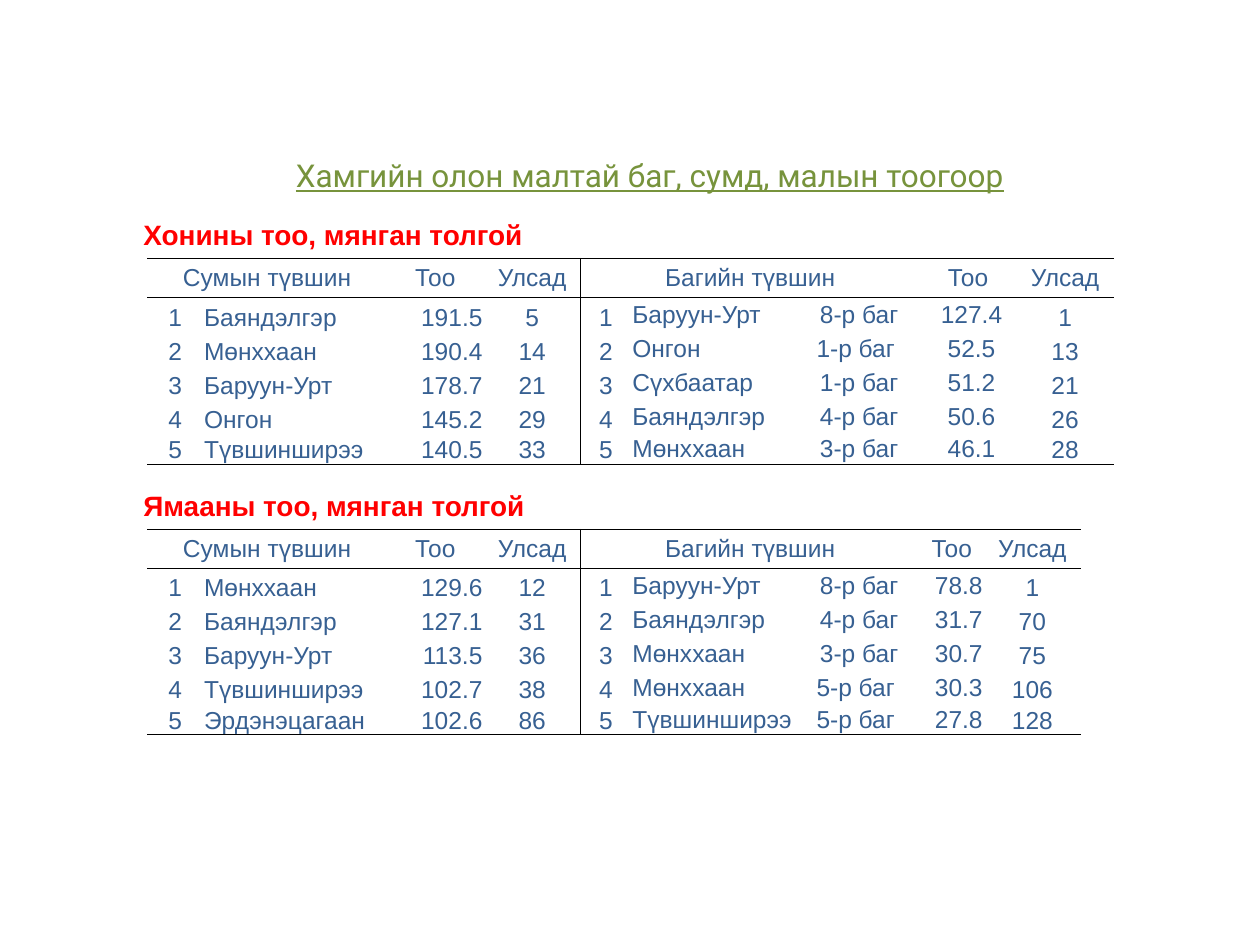
from lxml import etree
from pptx import Presentation
from pptx.dml.color import RGBColor
from pptx.enum.text import MSO_ANCHOR, PP_ALIGN
from pptx.oxml.ns import qn
from pptx.util import Inches, Pt

LEFT, CENTER, RIGHT = PP_ALIGN.LEFT, PP_ALIGN.CENTER, PP_ALIGN.RIGHT
MIDDLE, BOTTOM = MSO_ANCHOR.MIDDLE, MSO_ANCHOR.BOTTOM

COLORS = {"title": "77933C", "heading": "FF0000", "body": "376092", "rule": "000000"}

HEADER = ["Сумын түвшин", "", "Тоо", "Улсад", "Багийн түвшин", "", "", "Тоо", "Улсад"]
HEADER_SPANS = [(0, 1), (4, 6)]
ROW_HEIGHTS = [0.31, 0.27, 0.27, 0.27, 0.27, 0.23]
COL_WIDTHS = [0.44, 1.46, 0.77, 0.77, 0.4, 1.33, 0.96]
ALIGNS = [CENTER, LEFT, RIGHT, CENTER, CENTER, LEFT, CENTER]
MIDDLE_COLS = (5, 6, 7)
DIVIDER_COL = 4

SHEEP = [
    ["Баяндэлгэр", "191.5", "5", "Баруун-Урт", "8-р баг", " 127.4", "1"],
    ["Мөнххаан", "190.4", "14", "Онгон", "1-р баг ", " 52.5", "13"],
    ["Баруун-Урт", "178.7", "21", "Сүхбаатар", "1-р баг", " 51.2", "21"],
    ["Онгон", "145.2", "29", "Баяндэлгэр", "4-р баг", " 50.6", "26"],
    ["Түвшинширээ", "140.5", "33", "Мөнххаан", "3-р баг", " 46.1", "28"],
]
GOATS = [
    ["Мөнххаан", "129.6", "12", "Баруун-Урт", "8-р баг", "78.8", "1"],
    ["Баяндэлгэр", "127.1", "31", "Баяндэлгэр", "4-р баг", "31.7", "70"],
    ["Баруун-Урт", "113.5", "36", "Мөнххаан", "3-р баг", "30.7", "75"],
    ["Түвшинширээ", "102.7", "38", "Мөнххаан", "5-р баг ", "30.3", "106"],
    ["Эрдэнэцагаан", "102.6", "86", "Түвшинширээ", "5-р баг ", "27.8", "128"],
]


def write_text(tf, text, size, color, font="Arial", align=LEFT, bold=False, underline=False):
    p = tf.paragraphs[0]
    p.alignment = align
    r = p.add_run()
    r.text = text
    r.font.name = font
    r.font.size = Pt(size)
    r.font.bold = bold
    r.font.underline = underline
    r.font.color.rgb = RGBColor.from_string(COLORS[color])


def add_label(slide, left, top, width, height, text, **fmt):
    box = slide.shapes.add_textbox(Inches(left), Inches(top), Inches(width), Inches(height))
    box.text_frame.word_wrap = True
    write_text(box.text_frame, text, **fmt)


def set_borders(cell, sides):
    tc_pr = cell._tc.get_or_add_tcPr()
    for side in "LRTB":
        ln = etree.SubElement(tc_pr, qn(f"a:ln{side}"), w=str(Pt(0.5)))
        if side in sides:
            fill = etree.SubElement(ln, qn("a:solidFill"))
            etree.SubElement(fill, qn("a:srgbClr"), val=COLORS["rule"])
        else:
            etree.SubElement(ln, qn("a:noFill"))


def border_sides(row, col, last_row):
    sides = ""
    if row <= 1:
        sides += "T"
    if row in (0, last_row):
        sides += "B"
    if col == DIVIDER_COL:
        sides += "L"
    if col == DIVIDER_COL - 1:
        sides += "R"
    return sides


def add_ranking(slide, left, top, records, count_width, count_align):
    rows = [HEADER]
    for rank, record in enumerate(records, 1):
        rows.append([str(rank), *record[:3], str(rank), *record[3:]])
    widths = COL_WIDTHS + [count_width, 0.77]
    aligns = ALIGNS + [count_align, CENTER]
    frame = slide.shapes.add_table(
        len(rows), len(widths), Inches(left), Inches(top),
        Inches(sum(widths)), Inches(sum(ROW_HEIGHTS)))
    table = frame.table
    table.first_row = False
    table.horz_banding = False
    for col, width in enumerate(widths):
        table.columns[col].width = Inches(width)
    for row, height in enumerate(ROW_HEIGHTS):
        table.rows[row].height = Inches(height)
    for first, last in HEADER_SPANS:
        table.cell(0, first).merge(table.cell(0, last))
    for row, values in enumerate(rows):
        for col, value in enumerate(values):
            cell = table.cell(row, col)
            cell.margin_left = cell.margin_right = cell.margin_top = Inches(0.01)
            cell.margin_bottom = 0
            cell.vertical_anchor = MIDDLE if row == 0 or col in MIDDLE_COLS else BOTTOM
            set_borders(cell, border_sides(row, col, len(rows) - 1))
            cell.fill.background()
            write_text(cell.text_frame, value, 14, "body",
                       align=CENTER if row == 0 else aligns[col])


def add_section(slide, left, top, heading, records, count_width, count_align):
    add_label(slide, left, top, 5.83, 0.37, heading, size=16, color="heading", bold=True)
    add_ranking(slide, left + 0.13, top + 0.37, records, count_width, count_align)


def main():
    prs = Presentation()
    prs.slide_width, prs.slide_height = Inches(10), Inches(7.5)
    slide = prs.slides.add_slide(prs.slide_layouts[6])
    add_label(slide, 2.25, 1.19, 5.83, 0.4, "Хамгийн олон малтай баг, сумд, малын тоогоор",
              size=18, color="title", font="Roboto", underline=True)
    add_section(slide, 1.04, 1.68, "Хонины тоо, мянган толгой", SHEEP, 0.77, CENTER)
    add_section(slide, 1.04, 3.83, "Ямааны тоо, мянган толгой", GOATS, 0.51, RIGHT)
    prs.save("out.pptx")


if __name__ == "__main__":
    main()
